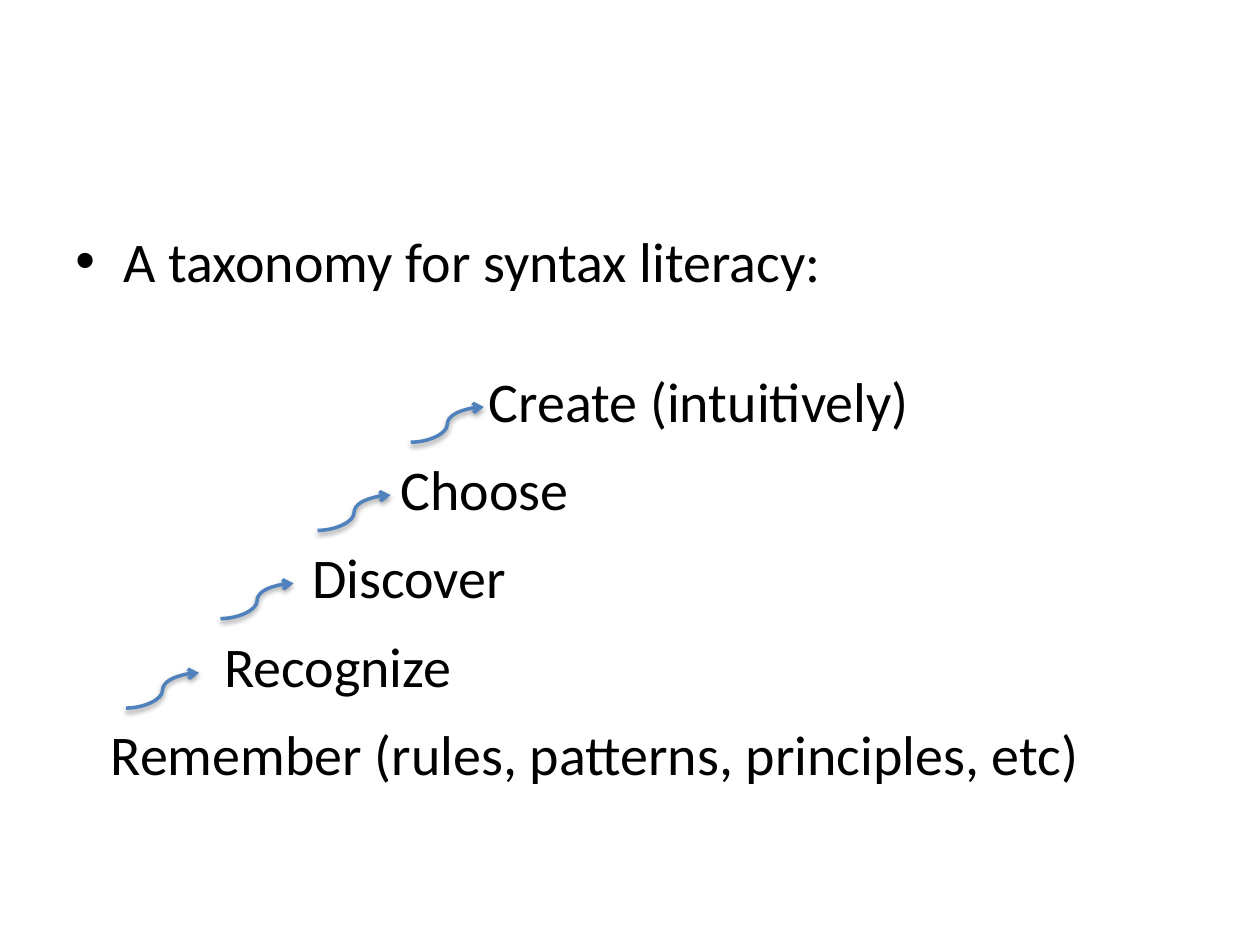
from dataclasses import dataclass

from lxml.etree import SubElement
from pptx import Presentation
from pptx.dml.color import RGBColor
from pptx.enum.shapes import MSO_CONNECTOR
from pptx.oxml import parse_xml
from pptx.oxml.ns import nsdecls, qn
from pptx.slide import Slide
from pptx.text.text import TextFrame, _Paragraph
from pptx.util import Inches, Pt

BLACK = RGBColor(0x00, 0x00, 0x00)
BLUE = RGBColor(0x4F, 0x81, 0xBD)
FONT = "Calibri"
SIZE = 32
RUN, RISE = 0.58, 0.28

SHADOW = f"""<a:effectLst {nsdecls("a")}>
  <a:outerShdw blurRad="{Pt(3.1)}" dist="{Pt(1.6)}" dir="5400000" rotWithShape="0">
    <a:srgbClr val="000000"><a:alpha val="38000"/></a:srgbClr>
  </a:outerShdw>
</a:effectLst>"""


@dataclass(frozen=True)
class Step:
    text: str
    indent: float


@dataclass(frozen=True)
class Arrow:
    left: float
    base: float


STEPS = [
    Step("Create (intuitively)", 3.0),
    Step("Choose", 2.3),
    Step("Discover", 1.6),
    Step("Recognize", 0.9),
    Step("Remember (rules, patterns, principles, etc)", 0),
]
ARROWS = [Arrow(1.75, 4.91), Arrow(1, 5.62), Arrow(2.52, 4.21), Arrow(3.26, 3.51)]


def add_box(slide: Slide, left: float, top: float, width: float, height: float) -> TextFrame:
    box = slide.shapes.add_textbox(Inches(left), Inches(top), Inches(width), Inches(height))
    box.text_frame.word_wrap = True
    return box.text_frame


def set_text(para: _Paragraph, text: str, indent: float, hang: float = 0) -> None:
    """Write one paragraph with its left margin and hanging first line."""
    para.text = text
    font = para.runs[0].font
    font.name, font.size = FONT, Pt(SIZE)
    font.color.rgb = BLACK
    props = para._p.get_or_add_pPr()
    props.set("marL", str(Inches(indent)))
    props.set("indent", str(-Inches(hang)))


def add_head(slide: Slide) -> None:
    para = add_box(slide, 0.5, 1.75, 9, 4.95).paragraphs[0]
    set_text(para, "A taxonomy for syntax literacy:", 0.38, 0.38)
    props = para._p.get_or_add_pPr()
    SubElement(props, qn("a:buFont"), typeface="Arial")
    SubElement(props, qn("a:buChar"), char="•")


def add_steps(slide: Slide, steps: list[Step]) -> None:
    frame = add_box(slide, 0.78, 2.86, 8.26, 3.47)
    for i, step in enumerate(steps):
        para = frame.add_paragraph() if i else frame.paragraphs[0]
        set_text(para, step.text, step.indent)
        para.space_after = Pt(12)


def add_arrow(slide: Slide, arrow: Arrow) -> None:
    curve = slide.shapes.add_connector(
        MSO_CONNECTOR.CURVE,
        Inches(arrow.left), Inches(arrow.base),
        Inches(arrow.left + RUN), Inches(arrow.base - RISE),
    )
    curve.line.color.rgb = BLUE
    curve.line.width = Pt(2)
    SubElement(curve.line._get_or_add_ln(), qn("a:tailEnd"), type="arrow")
    curve._element.spPr.append(parse_xml(SHADOW))


def main() -> None:
    deck = Presentation()
    deck.slide_width, deck.slide_height = Inches(10), Inches(7.5)
    slide = deck.slides.add_slide(deck.slide_layouts[6])
    add_head(slide)
    add_steps(slide, STEPS)
    for arrow in ARROWS:
        add_arrow(slide, arrow)
    deck.save("out.pptx")


if __name__ == "__main__":
    main()
